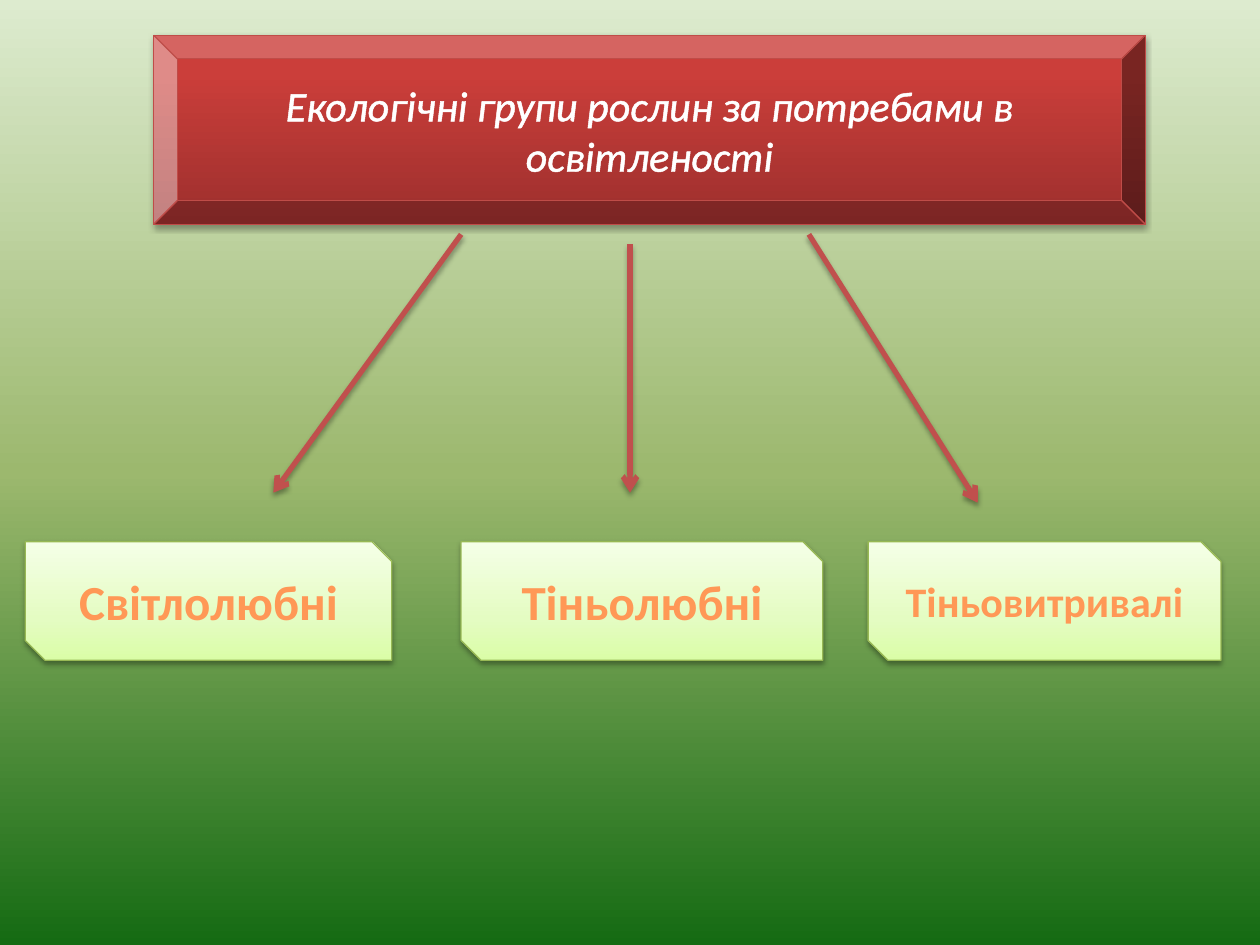
from pptx import Presentation
from pptx.dml.color import RGBColor
from pptx.enum.shapes import MSO_CONNECTOR, MSO_SHAPE
from pptx.enum.text import MSO_ANCHOR, PP_ALIGN
from pptx.oxml import parse_xml
from pptx.oxml.ns import nsdecls, qn
from pptx.util import Inches, Pt

COLORS = {
    "heading_edge": "BF4C48",
    "heading_text": "FFFFFF",
    "arrow": "C0504D",
    "group_edge": "98B955",
    "shadow": "000000",
}
GRADIENTS = {
    "background": [(0, "DDEBCF"), (50, "9CB86E"), (100, "156B13")],
    "heading": [(0, "9C2F2D"), (80, "CB3E3A"), (100, "CE3B37")],
    "group": [(0, "DAFDA7"), (35, "E4FCC2"), (100, "F5FFE7")],
    "group_text": [(0, "9D4700"), (78, "FF9856"), (100, "FFF5F1")],
}


def paint_gradient(fill, parent, name, angle):
    stops = "".join(
        f'<a:gs pos="{position * 1000}"><a:srgbClr val="{color}"/></a:gs>'
        for position, color in GRADIENTS[name]
    )
    fill.solid()
    parent.replace(parent.find(qn("a:solidFill")), parse_xml(
        f'<a:gradFill {nsdecls("a")} rotWithShape="1"><a:gsLst>{stops}</a:gsLst>'
        f'<a:lin ang="{angle * 60000}" scaled="0"/></a:gradFill>'
    ))


def add_panel(text, *, preset, box, gradient, edge, size, bold=False, italic=False):
    panel = slide.shapes.add_shape(preset, *map(Inches, box))
    paint_gradient(panel.fill, panel.element.spPr, gradient, 270)
    panel.line.color.rgb = RGBColor.from_string(COLORS[edge])
    panel.line.width = Pt(0.75)
    panel.text_frame.word_wrap = True
    panel.text_frame.vertical_anchor = MSO_ANCHOR.MIDDLE
    paragraph = panel.text_frame.paragraphs[0]
    paragraph.alignment = PP_ALIGN.CENTER
    run = paragraph.add_run()
    run.text = text
    run.font.name = "Calibri"
    run.font.size = Pt(size)
    run.font.bold = bold
    run.font.italic = italic
    return run


prs = Presentation()
prs.slide_width = Inches(10)
prs.slide_height = Inches(7.5)
slide = prs.slides.add_slide(prs.slide_layouts[6])

background_fill = slide.background.fill
background_fill.solid()
background = slide.element.find(".//" + qn("p:bgPr"))
paint_gradient(background_fill, background, "background", 90)

heading = add_panel(
    "Екологічні групи рослин за потребами в освітленості",
    preset=MSO_SHAPE.BEVEL, box=(1.22, 0.28, 7.87, 1.5),
    gradient="heading", edge="heading_edge", size=24, italic=True,
)
heading.font.color.rgb = RGBColor.from_string(COLORS["heading_text"])
heading.font.element.insert(0, parse_xml(
    f'<a:ln {nsdecls("a")} w="{Pt(1.45)}"><a:solidFill>'
    f'<a:srgbClr val="{COLORS["heading_text"]}"/></a:solidFill></a:ln>'
)) if hasattr(heading.font, "element") else heading.font.fill and heading._r.rPr.insert(0, parse_xml(
    f'<a:ln {nsdecls("a")} w="{Pt(1.45)}"><a:solidFill>'
    f'<a:srgbClr val="{COLORS["heading_text"]}"/></a:solidFill></a:ln>'
))

for ends in [(3.66, 1.86, 2.17, 3.91), (5, 1.94, 5, 3.91), (6.42, 1.86, 7.76, 3.99)]:
    arrow = slide.shapes.add_connector(MSO_CONNECTOR.STRAIGHT, *map(Inches, ends))
    arrow.line.color.rgb = RGBColor.from_string(COLORS["arrow"])
    arrow.line.width = Pt(3)
    arrow.element.spPr.find(qn("a:ln")).append(
        parse_xml(f'<a:tailEnd {nsdecls("a")} type="arrow"/>')
    )

for group, left, width, size in [
    ("Світлолюбні", 0.2, 2.91, 28),
    ("Тіньолюбні", 3.66, 2.87, 28),
    ("Тіньовитривалі", 6.89, 2.8, 24),
]:
    label = add_panel(
        group, preset=MSO_SHAPE.SNIP_2_DIAG_RECTANGLE, box=(left, 4.3, width, 0.94),
        gradient="group", edge="group_edge", size=size, bold=True,
    )
    paint_gradient(label.font.fill, label._r.rPr, "group_text", 90)

for part in slide.shapes:
    part.element.spPr.append(parse_xml(
        f'<a:effectLst {nsdecls("a")}><a:outerShdw blurRad="{Pt(3.1)}" dist="{Pt(1.8)}" '
        f'dir="5400000" rotWithShape="0"><a:srgbClr val="{COLORS["shadow"]}">'
        '<a:alpha val="35000"/></a:srgbClr></a:outerShdw></a:effectLst>'
    ))

prs.save("out.pptx")
